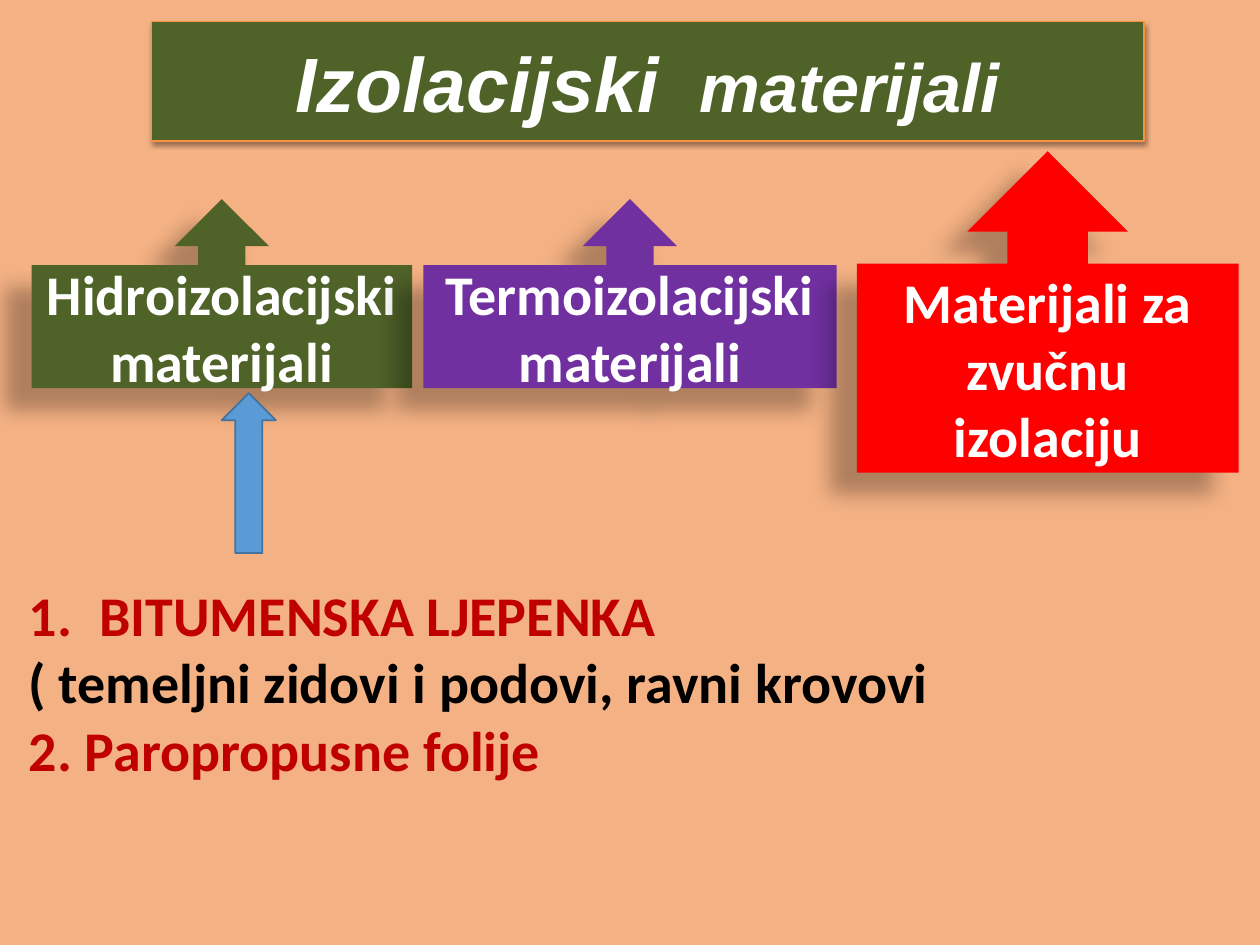
import pptx
import pptx.dml.color
import pptx.enum.shapes
import pptx.enum.text
import pptx.oxml.ns
import pptx.oxml.xmlchemy
import pptx.util
from lxml import etree

Inches = pptx.util.Inches
Pt = pptx.util.Pt
RGB = pptx.dml.color.RGBColor
SHAPE = pptx.enum.shapes.MSO_SHAPE
ALIGN = pptx.enum.text.PP_ALIGN
ANCHOR = pptx.enum.text.MSO_ANCHOR
AUTO_SIZE = pptx.enum.text.MSO_AUTO_SIZE
qn = pptx.oxml.ns.qn

PEACH = RGB(0xF4, 0xB1, 0x83)
GREEN = RGB(0x4F, 0x62, 0x28)
ORANGE = RGB(0xF6, 0x92, 0x40)
PURPLE = RGB(0x70, 0x30, 0xA0)
RED = RGB(0xFF, 0x00, 0x00)
DARK_RED = RGB(0xC0, 0x00, 0x00)
BLUE = RGB(0x5B, 0x9B, 0xD5)
DARK_BLUE = RGB(0x43, 0x73, 0x9E)
WHITE = RGB(0xFF, 0xFF, 0xFF)
BLACK = RGB(0x00, 0x00, 0x00)

TITLE_SHADOW = dict(opacity=38, blur=3.1, distance=1.6, angle=90)
CALLOUT_SHADOW = dict(opacity=28, blur=11.8, distance=19.7, angle=141)


def add_text(paragraph, text, size=32, font="Calibri", color=WHITE, italic=False, align=None):
    run = paragraph.add_run()
    run.text = text
    run.font.size = Pt(size)
    run.font.name = font
    run.font.color.rgb = color
    run.font.bold = True
    run.font.italic = italic
    paragraph.alignment = align


def paint(shape, fill, line=None, line_width=1):
    shape.shadow.inherit = False
    shape.fill.solid()
    shape.fill.fore_color.rgb = fill
    if line is None:
        shape.line.fill.background()
    else:
        shape.line.color.rgb = line
        shape.line.width = Pt(line_width)


def cast_shadow(shape, opacity, blur, distance, angle):
    effects = shape._element.spPr.find(qn("a:effectLst"))
    shadow = etree.SubElement(
        effects, qn("a:outerShdw"), blurRad=str(Pt(blur)), dist=str(Pt(distance)),
        dir=str(angle * 60000), algn="ctr", rotWithShape="0")
    color = etree.SubElement(shadow, qn("a:srgbClr"), val=str(BLACK))
    etree.SubElement(color, qn("a:alpha"), val=str(opacity * 1000))


def place_title(slide, left, top, width, height):
    title = slide.shapes.title
    title.left, title.top, title.width, title.height = left, top, width, height
    paint(title, GREEN, ORANGE, 0.75)
    cast_shadow(title, **TITLE_SHADOW)
    frame = title.text_frame
    frame.auto_size = AUTO_SIZE.NONE
    frame.vertical_anchor = ANCHOR.MIDDLE
    heading = dict(font="Arial", italic=True, align=ALIGN.CENTER)
    add_text(frame.paragraphs[0], "Izolacijski ", size=44, **heading)
    add_text(frame.paragraphs[0], " materijali", size=39, **heading)


def place_callout(slide, left, top, width, height, text, fill):
    callout = slide.shapes.add_shape(SHAPE.UP_ARROW_CALLOUT, left, top, width, height)
    paint(callout, fill)
    cast_shadow(callout, **CALLOUT_SHADOW)
    frame = callout.text_frame
    frame.word_wrap = True
    frame.vertical_anchor = ANCHOR.MIDDLE
    add_text(frame.paragraphs[0], text, align=ALIGN.CENTER)


def place_examples(slide, left, top, width, height):
    examples = slide.shapes.add_textbox(left, top, width, height)
    frame = examples.text_frame
    frame.word_wrap = True
    frame.auto_size = AUTO_SIZE.SHAPE_TO_FIT_TEXT
    numbered = frame.paragraphs[0]
    properties = numbered._p.get_or_add_pPr()
    properties.set("marL", str(Inches(0.56)))
    properties.set("indent", str(Inches(-0.56)))
    etree.SubElement(properties, qn("a:buFont"), typeface="+mj-lt")
    etree.SubElement(properties, qn("a:buAutoNum"), type="arabicPeriod")
    add_text(numbered, "BITUMENSKA LJEPENKA", color=DARK_RED)
    add_text(frame.add_paragraph(), "( temeljni zidovi i podovi, ravni krovovi", color=BLACK)
    add_text(frame.add_paragraph(), "2. Paropropusne folije", color=DARK_RED)


def place_arrow(slide, left, top, width, height):
    arrow = slide.shapes.add_shape(SHAPE.UP_ARROW, left, top, width, height)
    paint(arrow, BLUE, DARK_BLUE)


def main():
    deck = pptx.Presentation()
    deck.slide_width, deck.slide_height = Inches(10), Inches(7.5)
    slide = deck.slides.add_slide(deck.slide_layouts[5])
    slide.background.fill.solid()
    slide.background.fill.fore_color.rgb = PEACH

    place_title(slide, Inches(1.2), Inches(0.17), Inches(7.88), Inches(0.95))
    callouts = [
        (0.25, 1.58, 3.02, 1.5, "Hidroizolacijski materijali", GREEN),
        (3.36, 1.58, 3.28, 1.5, "Termoizolacijski materijali", PURPLE),
        (6.8, 1.2, 3.03, 2.55, "Materijali za zvučnu izolaciju", RED),
    ]
    for *box, text, fill in callouts:
        place_callout(slide, *map(Inches, box), text, fill)
    place_examples(slide, Inches(0.13), Inches(4.56), Inches(8.42), Inches(1.72))
    place_arrow(slide, Inches(1.76), Inches(3.12), Inches(0.43), Inches(1.27))
    deck.save("out.pptx")


if __name__ == "__main__":
    main()
